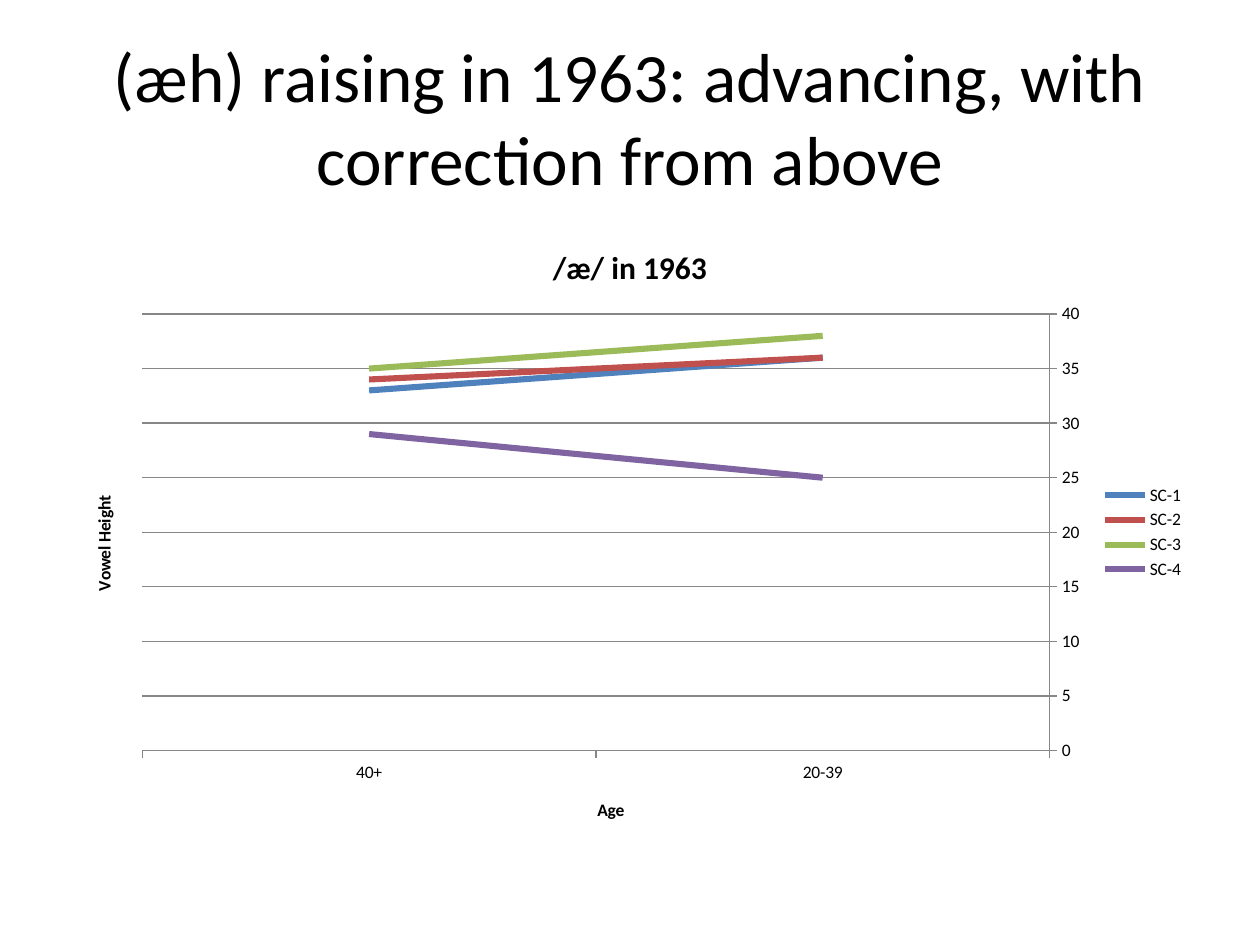
from lxml import etree
from pptx import Presentation
from pptx.chart.data import CategoryChartData
from pptx.dml.color import RGBColor
from pptx.enum.chart import XL_CHART_TYPE as CT, XL_LEGEND_POSITION as LP, XL_TICK_MARK as TM
from pptx.enum.text import MSO_ANCHOR, PP_ALIGN
from pptx.oxml.ns import qn
from pptx.util import Inches, Pt

FONT = "Calibri"
COLORS = {"text": "000000", "axis": "878787", "SC-1": "4F81BD",
          "SC-2": "C0504D", "SC-3": "9BBB59", "SC-4": "8064A2"}
TITLE = "(æh) raising in 1963: advancing, with correction from above"
CHART_TITLE = "/æ/ in 1963"
AGES = ["20-39", "40+"]
HEIGHTS = {"SC-1": (36, 33), "SC-2": (36, 34), "SC-3": (38, 35), "SC-4": (25, 29)}
PLOT_AREA = {"x": 0.07, "y": 0.15, "w": 0.8, "h": 0.7}


def color(name):
    return RGBColor.from_string(COLORS[name])


def style_font(font, size, bold=False):
    font.name, font.size, font.bold = FONT, Pt(size), bold
    font.color.rgb = color("text")


def style_line(line, name, width):
    line.color.rgb = color(name)
    line.width = Pt(width)


def add_run(tf, text, size, bold=False):
    r = tf.paragraphs[0].add_run()
    r.text = text
    style_font(r.font, size, bold)


def place_plot(chart):
    area = chart._chartSpace.chart.plotArea
    for old in area.findall(qn("c:layout")):
        area.remove(old)
    layout = etree.Element(qn("c:layout"))
    area.insert(0, layout)
    manual = etree.SubElement(layout, qn("c:manualLayout"))
    settings = {"layoutTarget": "inner", "xMode": "edge", "yMode": "edge", **PLOT_AREA}
    for tag, value in settings.items():
        etree.SubElement(manual, qn(f"c:{tag}")).set("val", str(value))


prs = Presentation()
prs.slide_width, prs.slide_height = Inches(10), Inches(7.5)
slide = prs.slides.add_slide(prs.slide_layouts[6])

tf = slide.shapes.add_textbox(Inches(0.5), Inches(0.3), Inches(9), Inches(1.25)).text_frame
tf.word_wrap = True
tf.vertical_anchor = MSO_ANCHOR.MIDDLE
tf.paragraphs[0].alignment = PP_ALIGN.CENTER
add_run(tf, TITLE, 39.6)

data = CategoryChartData()
data.categories = AGES
for name, values in HEIGHTS.items():
    data.add_series(name, values)
chart = slide.shapes.add_chart(CT.LINE, Inches(0.5), Inches(1.75),
                               Inches(9), Inches(4.95), data).chart
style_font(chart.font, 10)
chart.has_title = True
add_run(chart.chart_title.text_frame, CHART_TITLE, 18, True)
chart.has_legend = True
chart.legend.position = LP.RIGHT
chart.legend.include_in_layout = False
chart.plots[0].vary_by_categories = False
for series in chart.plots[0].series:
    series.smooth = False
    style_line(series.format.line, series.name, 3.5)

ages, heights = chart.category_axis, chart.value_axis
for axis, label in ((ages, "Age"), (heights, "Vowel Height")):
    axis.has_title = True
    add_run(axis.axis_title.text_frame, label, 10, True)
    axis.major_tick_mark, axis.minor_tick_mark = TM.OUTSIDE, TM.NONE
    style_line(axis.format.line, "axis", 0.75)
ages.reverse_order = True
heights.minimum_scale, heights.maximum_scale, heights.major_unit = 0, 40, 5
heights.has_major_gridlines = True
style_line(heights.major_gridlines.format.line, "axis", 0.75)
place_plot(chart)

prs.save("out.pptx")
